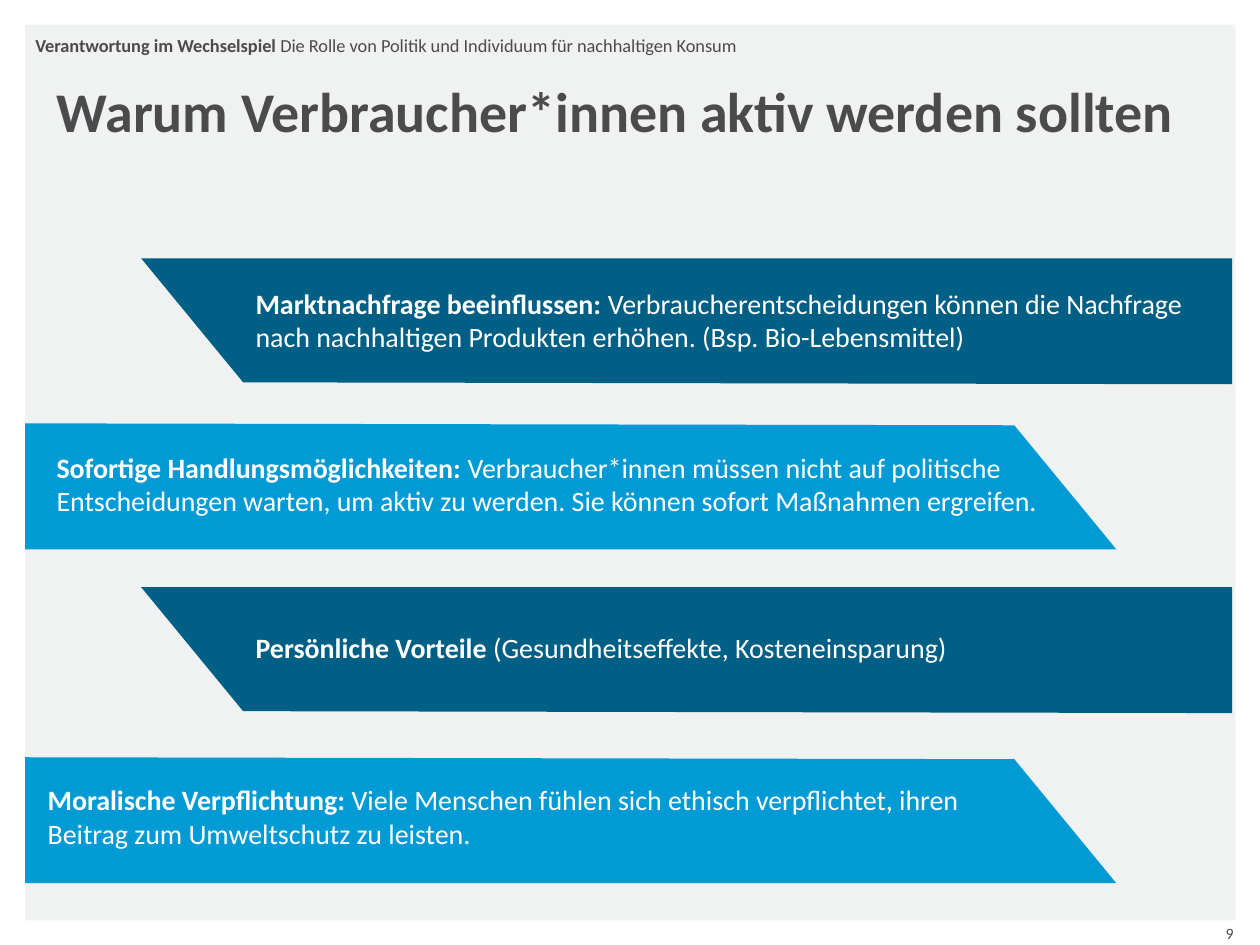
from dataclasses import dataclass

from lxml.etree import SubElement
from pptx import Presentation
from pptx.dml.color import RGBColor
from pptx.enum.shapes import MSO_SHAPE
from pptx.enum.text import MSO_ANCHOR, MSO_AUTO_SIZE, PP_ALIGN
from pptx.oxml.ns import qn
from pptx.util import Inches, Pt

FONT = "Calibri"
HUES = {"panel": "F0F1F1", "ink": "4B4B4D", "deep": "005F85",
        "light": "009BD5", "white": "FFFFFF"}

# Grid: 100 columns by 75 rows
WIDE, HIGH = Inches(10), Inches(7.5)
COL, ROW = WIDE / 100, HIGH / 75

# Band outline in grid units
LONG, TALL, SLANT, TILT = 86.6, 10, 8.1, 0.15
EAST, WEST = 11.2, 2


@dataclass
class Box:
    left: float
    top: float
    width: float
    height: float

    def spans(self) -> tuple:
        return (int(self.left * COL), int(self.top * ROW),
                int(self.width * COL), int(self.height * ROW))


@dataclass
class Band:
    top: float
    turned: bool
    text: Box
    head: str
    tail: str


BANDS = [
    Band(20.5, False, Box(19.3, 22.2, 78.5, 6.4), "Marktnachfrage beeinflussen:",
         " Verbraucherentscheidungen können die Nachfrage nach nachhaltigen "
         "Produkten erhöhen. (Bsp. Bio-Lebensmittel)"),
    Band(33.6, True, Box(3.5, 35.2, 81.9, 6.4), "Sofortige Handlungsmöglichkeiten:",
         " Verbraucher*innen müssen nicht auf politische Entscheidungen warten, "
         "um aktiv zu werden. Sie können sofort Maßnahmen ergreifen."),
    Band(46.6, False, Box(19.3, 49.5, 78.5, 3.7), "Persönliche Vorteile ",
         "(Gesundheitseffekte, Kosteneinsparung)"),
    Band(60.1, True, Box(2.8, 61.6, 74.8, 6.4), "Moralische Verpflichtung:",
         " Viele Menschen fühlen sich ethisch verpflichtet, ihren Beitrag zum "
         "Umweltschutz zu leisten."),
]


def tint(name: str) -> RGBColor:
    return RGBColor.from_string(HUES[name])


def paint(shape, name: str) -> None:
    shape.shadow.inherit = False
    shape.fill.solid()
    shape.fill.fore_color.rgb = tint(name)
    shape.line.fill.background()


def place(shape, box: Box) -> None:
    shape.left, shape.top, shape.width, shape.height = box.spans()


def write(shape, parts: list, size: float, hue: str, align=PP_ALIGN.LEFT,
          anchor=MSO_ANCHOR.TOP, inset: bool = False) -> None:
    """Fill one paragraph with (text, bold) parts."""
    frame = shape.text_frame
    frame.word_wrap = True
    frame.auto_size = MSO_AUTO_SIZE.NONE
    frame.vertical_anchor = anchor
    if not inset:
        frame.margin_left = frame.margin_right = 0
        frame.margin_top = frame.margin_bottom = 0
    para = frame.paragraphs[0]
    para.alignment = align
    para.space_before = Pt(0)
    font = para.font
    font.name, font.size, font.color.rgb = FONT, Pt(size), tint(hue)
    for text, bold in parts:
        run = para.add_run()
        run.text = text
        run.font.bold = bold


def plain(shape) -> None:
    """Drop the bullet and indent of a body placeholder."""
    props = shape.text_frame.paragraphs[0]._p.get_or_add_pPr()
    props.set("marL", "0")
    props.set("indent", "0")
    SubElement(props, qn("a:buNone"))


def draw(slide, band: Band) -> None:
    left = WEST if band.turned else EAST
    dots = [(0, 0), (SLANT, TALL - TILT), (LONG, TALL), (LONG, 0)]
    dots = [((left + x) * COL, (band.top + y) * ROW) for x, y in dots]
    pen = slide.shapes.build_freeform(*dots[0])
    pen.add_line_segments(dots[1:], close=True)
    shape = pen.convert_to_shape()
    shape.rotation = 180 if band.turned else 0
    paint(shape, "light" if band.turned else "deep")
    label = slide.shapes.add_textbox(*band.text.spans())
    write(label, [(band.head, True), (band.tail, False)], 16, "white",
          anchor=MSO_ANCHOR.MIDDLE, inset=True)


def main() -> None:
    deck = Presentation()
    deck.slide_width, deck.slide_height = WIDE, HIGH
    slide = deck.slides.add_slide(deck.slide_layouts[1])

    # Grey panel, behind the placeholders
    panel = slide.shapes.add_shape(MSO_SHAPE.RECTANGLE,
                                   *Box(2, 1.95, 96.05, 71.1).spans())
    paint(panel, "panel")
    slide.shapes._spTree.insert(2, panel._element)

    # Running head and title
    body = slide.placeholders[1]
    place(body, Box(2.8, 2.7, 92.1, 2.5))
    plain(body)
    write(body, [("Verantwortung im Wechselspiel ", True),
                 ("Die Rolle von Politik und Individuum für nachhaltigen Konsum",
                  False)], 10.5, "ink")
    title = slide.shapes.title
    place(title, Box(2.8, 6.1, 92.1, 6.2))
    write(title, [("Warum Verbraucher*innen aktiv werden sollten", True)],
          32, "ink", PP_ALIGN.CENTER)

    # Four bands, pointing in turn
    for band in BANDS:
        draw(slide, band)

    # Page number
    page = slide.shapes.add_textbox(*Box(91.8, 73.1, 6.1, 1.9).spans())
    write(page, [("9", False)], 9, "ink", PP_ALIGN.RIGHT, MSO_ANCHOR.MIDDLE)

    deck.save("out.pptx")


if __name__ == "__main__":
    main()
